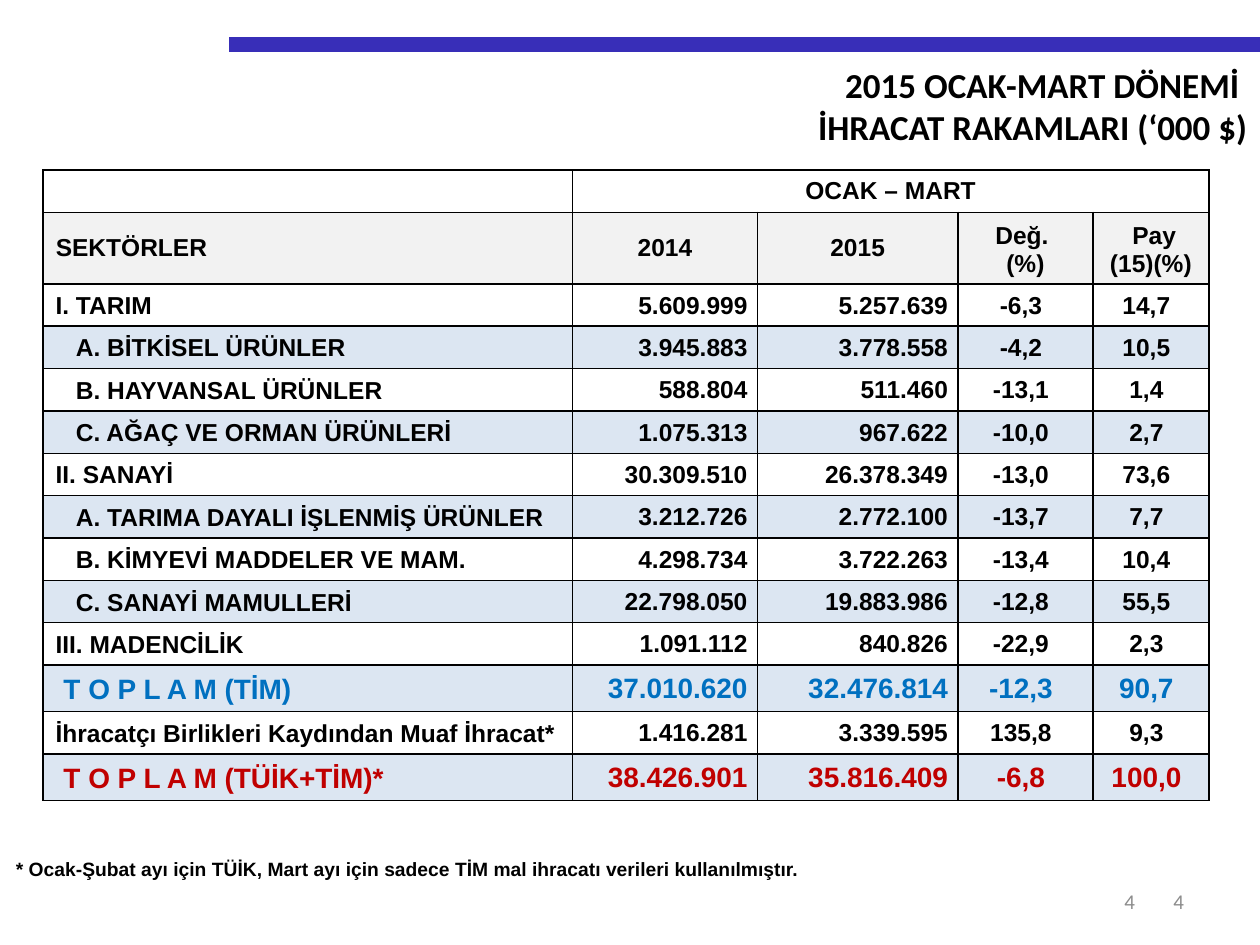
from dataclasses import dataclass

import pptx
import pptx.dml.color
import pptx.enum.shapes
import pptx.enum.text
import pptx.oxml
import pptx.oxml.ns
import pptx.util
from pptx.util import Cm

RGBColor = pptx.dml.color.RGBColor
PP_ALIGN = pptx.enum.text.PP_ALIGN
MIDDLE = pptx.enum.text.MSO_ANCHOR.MIDDLE
BOTTOM = pptx.enum.text.MSO_ANCHOR.BOTTOM

BLACK = RGBColor(0x00, 0x00, 0x00)
GREY = RGBColor(0x8C, 0x8C, 0x8C)
BAR_BLUE = RGBColor(0x38, 0x2E, 0xB8)
HEADER_GREY = RGBColor(0xF2, 0xF2, 0xF2)
BAND_BLUE = RGBColor(0xDC, 0xE6, 0xF2)
TOTAL_BLUE = RGBColor(0x00, 0x70, 0xC0)
TOTAL_RED = RGBColor(0xC0, 0x00, 0x00)

COLUMN_WIDTHS = [Cm(10.67), Cm(3.73), Cm(4.04), Cm(2.72), Cm(2.34)]
ROW_HEIGHT, HEADER_HEIGHT, TOTAL_HEIGHT = Cm(0.85), Cm(1.44), Cm(0.93)
SIDE = Cm(0.25)
NUMBER_INSETS = (Cm(0.02), Cm(0.02), Cm(0.2), 0)
HEADINGS = ["SEKTÖRLER", "2014", "2015", "Değ. \n(%)", " Pay\n(15)(%)"]


@dataclass
class Style:
    size: float = 14
    color: RGBColor = BLACK
    font: str = "Arial"
    bold: bool = True
    align: PP_ALIGN = PP_ALIGN.LEFT


@dataclass
class Sector:
    label: str
    values: str
    indent: int = 0
    banded: bool = False
    size: float = 14
    color: RGBColor = BLACK
    height: int = ROW_HEIGHT


def subsector(label: str, values: str, banded: bool = True) -> Sector:
    return Sector(label, values, Cm(0.41), banded)


def total(label: str, values: str, color: RGBColor) -> Sector:
    return Sector(label, values, Cm(0.16), True, 16, color, TOTAL_HEIGHT)


SECTORS = [
    Sector("I. TARIM", "5.609.999 5.257.639 -6,3 14,7"),
    subsector("A. BİTKİSEL ÜRÜNLER", "3.945.883 3.778.558 -4,2 10,5"),
    subsector("B. HAYVANSAL ÜRÜNLER", "588.804 511.460 -13,1 1,4", banded=False),
    subsector("C. AĞAÇ VE ORMAN ÜRÜNLERİ", "1.075.313 967.622 -10,0 2,7"),
    Sector("II. SANAYİ", "30.309.510 26.378.349 -13,0 73,6"),
    subsector("A. TARIMA DAYALI İŞLENMİŞ ÜRÜNLER", "3.212.726 2.772.100 -13,7 7,7"),
    subsector("B. KİMYEVİ MADDELER VE MAM.", "4.298.734 3.722.263 -13,4 10,4", banded=False),
    subsector("C. SANAYİ MAMULLERİ", "22.798.050 19.883.986 -12,8 55,5"),
    Sector("III. MADENCİLİK", "1.091.112 840.826 -22,9 2,3"),
    total("T O P L A M (TİM)", "37.010.620 32.476.814 -12,3 90,7", TOTAL_BLUE),
    Sector("İhracatçı Birlikleri Kaydından Muaf İhracat*", "1.416.281 3.339.595 135,8 9,3"),
    total("T O P L A M (TÜİK+TİM)*", "38.426.901 35.816.409 -6,8 100,0", TOTAL_RED),
]


def write(frame, text: str, style: Style) -> None:
    frame.text = text
    for paragraph in frame.paragraphs:
        paragraph.alignment = style.align
        for run in paragraph.runs:
            run.font.size = pptx.util.Pt(style.size)
            run.font.name = style.font
            run.font.bold = style.bold
            run.font.color.rgb = style.color


def add_text(slide, box: tuple, text: str, style: Style, anchor) -> None:
    frame = slide.shapes.add_textbox(*box).text_frame
    frame.word_wrap = True
    frame.vertical_anchor = anchor
    write(frame, text, style)


def add_plain_table(slide, rows: int, columns: int, box: tuple):
    table = slide.shapes.add_table(rows, columns, *box).table
    table.first_row = False
    table.horz_banding = False
    for cell in table.iter_cells():
        cell.fill.background()
    return table


def add_borders(cell) -> None:
    properties = cell._tc.get_or_add_tcPr()
    for position, side in enumerate("LRTB"):
        properties.insert(position, pptx.oxml.parse_xml(
            f'<a:ln{side} {pptx.oxml.ns.nsdecls("a")} w="12700">'
            f'<a:solidFill><a:srgbClr val="{BLACK}"/></a:solidFill></a:ln{side}>'))


def fill_cell(cell, text: str, style: Style, anchor=MIDDLE, fill=None, insets=None) -> None:
    write(cell.text_frame, text, style)
    cell.vertical_anchor = anchor
    if fill is not None:
        cell.fill.solid()
        cell.fill.fore_color.rgb = fill
    if insets:
        cell.margin_left, cell.margin_top, cell.margin_right, cell.margin_bottom = insets


def add_export_table(slide) -> None:
    heights = [ROW_HEIGHT, HEADER_HEIGHT] + [sector.height for sector in SECTORS]
    table = add_plain_table(slide, len(heights), len(COLUMN_WIDTHS),
                            (Cm(0.87), Cm(3.43), sum(COLUMN_WIDTHS), sum(heights)))
    for column, width in zip(table.columns, COLUMN_WIDTHS):
        column.width = width
    for row, height in zip(table.rows, heights):
        row.height = height
    for cell in table.iter_cells():
        add_borders(cell)

    # Period and column headings
    for column in range(len(COLUMN_WIDTHS)):
        period = table.cell(0, column)
        period.margin_top = period.margin_bottom = 0
    table.cell(0, 1).merge(table.cell(0, 4))
    fill_cell(table.cell(0, 1), "OCAK – MART", Style(align=PP_ALIGN.CENTER))
    for column, heading in enumerate(HEADINGS):
        align = PP_ALIGN.CENTER if column else PP_ALIGN.LEFT
        fill_cell(table.cell(1, column), heading, Style(align=align),
                  BOTTOM if column > 2 else MIDDLE, HEADER_GREY)

    # Sector rows
    for row, sector in enumerate(SECTORS, start=2):
        fill = BAND_BLUE if sector.banded else None
        fill_cell(table.cell(row, 0), sector.label, Style(sector.size, sector.color),
                  BOTTOM, fill, (SIDE + sector.indent, Cm(0.13), Cm(0.1), Cm(0.13)))
        for column, value in enumerate(sector.values.split(), start=1):
            align = PP_ALIGN.RIGHT if column < 3 else PP_ALIGN.CENTER
            fill_cell(table.cell(row, column), value,
                      Style(sector.size, sector.color, align=align),
                      MIDDLE, fill, NUMBER_INSETS)


def add_top_bar(slide) -> None:
    bar = slide.shapes.add_connector(pptx.enum.shapes.MSO_CONNECTOR.STRAIGHT,
                                     Cm(4.62), Cm(0.9), Cm(25.4), Cm(0.9))
    bar.line.color.rgb = BAR_BLUE
    bar.line.width = pptx.util.Pt(8.5)
    bar._element.spPr.append(
        pptx.oxml.parse_xml(f'<a:effectLst {pptx.oxml.ns.nsdecls("a")}/>'))


def main() -> None:
    presentation = pptx.Presentation()
    presentation.slide_width, presentation.slide_height = Cm(25.4), Cm(19.05)
    slide = presentation.slides.add_slide(presentation.slide_layouts[6])

    # Top bar and page numbers
    add_top_bar(slide)
    number_style = Style(12, GREY, "Calibri", False, PP_ALIGN.RIGHT)
    for left, width in ((Cm(18.2), Cm(5.92)), (Cm(17.8), Cm(5.33))):
        add_text(slide, (left, Cm(17.65), width, Cm(1.02)), "4", number_style, MIDDLE)

    # Title
    add_text(slide, (Cm(2.69), Cm(1.15), Cm(22.71), Cm(1.97)),
             "2015 OCAK-MART DÖNEMİ \nİHRACAT RAKAMLARI (‘000 $)",
             Style(20, font="Calibri", align=PP_ALIGN.RIGHT),
             pptx.enum.text.MSO_ANCHOR.TOP)

    add_export_table(slide)

    # Footnote
    footnote = add_plain_table(slide, 1, 1, (Cm(0.3), Cm(17.12), Cm(18.8), Cm(0.79)))
    fill_cell(footnote.cell(0, 0),
              "* Ocak-Şubat ayı için TÜİK, Mart ayı için sadece TİM mal ihracatı "
              "verileri kullanılmıştır.",
              Style(11), insets=(Cm(0.02), Cm(0.02), Cm(0.02), 0))

    presentation.save("out.pptx")


if __name__ == "__main__":
    main()
